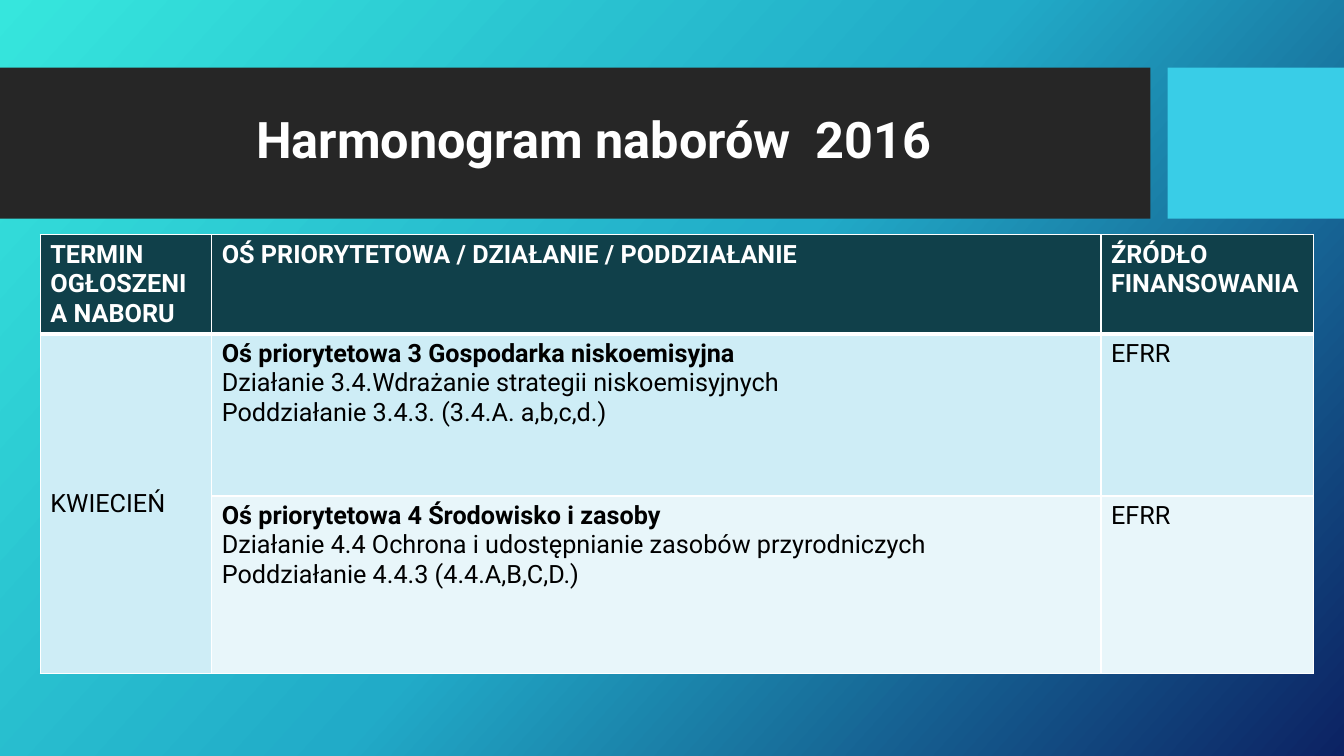
from copy import deepcopy
from dataclasses import dataclass

from lxml.etree import SubElement
from pptx import Presentation
from pptx.dml.color import RGBColor
from pptx.enum.shapes import MSO_SHAPE
from pptx.enum.text import MSO_ANCHOR, PP_ALIGN
from pptx.oxml.ns import qn
from pptx.util import Inches, Pt


@dataclass(frozen=True)
class Theme:
    font: str = "Roboto"
    title_size: int = 36
    table_size: int = 18
    white: str = "FFFFFF"
    black: str = "000000"
    banner: str = "262626"
    accent: str = "39CDE7"
    header: str = "10404A"
    bands: tuple = ("CEEDF6", "E8F6FA")
    gradient: tuple = ((0, "36E6DD"), (0.5, "21ABC8"), (1, "0C2263"))
    gradient_angle: int = 318


THEME = Theme()
COLUMNS = (1.7, 8.82, 2.11)
ROWS = (0.97, 1.61, 1.76)
HEADERS = (
    "TERMIN OGŁOSZENIA NABORU",
    "OŚ PRIORYTETOWA / DZIAŁANIE / PODDZIAŁANIE",
    "ŹRÓDŁO FINANSOWANIA",
)
MONTH = "KWIECIEŃ"
CALLS = (
    (("Oś priorytetowa 3 Gospodarka niskoemisyjna",
      "Działanie 3.4.Wdrażanie strategii niskoemisyjnych",
      "Poddziałanie 3.4.3. (3.4.A. a,b,c,d.)"), "EFRR"),
    (("Oś priorytetowa 4 Środowisko i zasoby",
      "Działanie 4.4 Ochrona i udostępnianie zasobów przyrodniczych",
      "Poddziałanie 4.4.3 (4.4.A,B,C,D.)"), "EFRR"),
)


def add_run(p, text, size, color, bold=False):
    r = p.add_run()
    r.text = text
    r.font.name = THEME.font
    r.font.size = Pt(size)
    r.font.bold = bold
    r.font.color.rgb = RGBColor.from_string(color)


def paint_background(s):
    fill = s.background.fill
    fill.gradient()
    fill.gradient_angle = THEME.gradient_angle
    stop_list = next(s.element.iter(qn("a:gsLst")))
    stop_list.append(deepcopy(stop_list[-1]))
    for stop, (position, color) in zip(fill.gradient_stops, THEME.gradient):
        stop.position = position
        stop.color.rgb = RGBColor.from_string(color)


def add_block(s, left, top, width, height, color):
    block = s.shapes.add_shape(MSO_SHAPE.RECTANGLE, Inches(left), Inches(top),
                               Inches(width), Inches(height))
    block.shadow.inherit = False
    block.fill.solid()
    block.fill.fore_color.rgb = RGBColor.from_string(color)
    block.line.fill.background()


def add_title_band(s, left, top, width, height):
    accent_width, gap = 1.75, 0.17
    banner_width = width - accent_width - gap
    add_block(s, left, top, banner_width, height, THEME.banner)
    add_block(s, left + width - accent_width, top, accent_width, height, THEME.accent)

    title = s.shapes.title
    s.shapes._spTree.append(title._element)  # bring in front of the banner
    title.left, title.top = Inches(left + 0.74), Inches(top + 0.15)
    title.width, title.height = Inches(banner_width - 0.9), Inches(1.18)
    tf = title.text_frame
    tf.word_wrap = True
    tf.vertical_anchor = MSO_ANCHOR.MIDDLE
    tf.margin_left = Inches(1.8)
    p = tf.paragraphs[0]
    p.alignment = PP_ALIGN.LEFT
    p.line_spacing = 0.9
    add_run(p, "Harmonogram naborów  2016", THEME.title_size, THEME.white, bold=True)


def style_cell(cell, color, top=1, bottom=1):
    """Fill the cell and draw its borders, with widths in points."""
    tc_pr = cell._tc.get_or_add_tcPr()
    for side, width in (("L", 1), ("R", 1), ("T", top), ("B", bottom)):
        ln = SubElement(tc_pr, qn(f"a:ln{side}"), w=str(Pt(width)))
        fill = SubElement(ln, qn("a:solidFill"))
        SubElement(fill, qn("a:srgbClr"), val=THEME.white)
    cell.fill.solid()
    cell.fill.fore_color.rgb = RGBColor.from_string(color)


def write_cell(cell, lines, color, bold_first=False):
    tf = cell.text_frame
    for i, line in enumerate(lines):
        p = tf.add_paragraph() if i else tf.paragraphs[0]
        add_run(p, line, THEME.table_size, color, bold=bold_first and i == 0)


def add_schedule(s, left, top, width, height):
    frame = s.shapes.add_table(len(ROWS), len(COLUMNS), Inches(left), Inches(top),
                               Inches(width), Inches(height))
    table = frame.table
    for column, size in zip(table.columns, COLUMNS):
        column.width = Inches(width * size / sum(COLUMNS))
    for row, size in zip(table.rows, ROWS):
        row.height = Inches(height * size / sum(ROWS))

    for c, header in enumerate(HEADERS):
        style_cell(table.cell(0, c), THEME.header, bottom=3)
        write_cell(table.cell(0, c), [header], THEME.white, bold_first=True)

    for r, (lines, source) in enumerate(CALLS, start=1):
        for c in range(len(COLUMNS)):
            band = THEME.bands[0 if c == 0 else r - 1]
            style_cell(table.cell(r, c), band, top=3 if r == 1 else 1)
        write_cell(table.cell(r, 1), lines, THEME.black, bold_first=True)
        write_cell(table.cell(r, 2), [source], THEME.black)

    month = table.cell(1, 0)
    month.merge(table.cell(len(CALLS), 0))
    month.vertical_anchor = MSO_ANCHOR.MIDDLE
    write_cell(month, [MONTH], THEME.black)


def main():
    prs = Presentation()
    prs.slide_width, prs.slide_height = Inches(13.33), Inches(7.5)
    s = prs.slides.add_slide(prs.slide_layouts[5])
    paint_background(s)
    add_title_band(s, 0, 0.67, 13.33, 1.5)
    add_schedule(s, 0.4, 2.33, sum(COLUMNS), sum(ROWS))
    prs.save("out.pptx")


if __name__ == "__main__":
    main()
